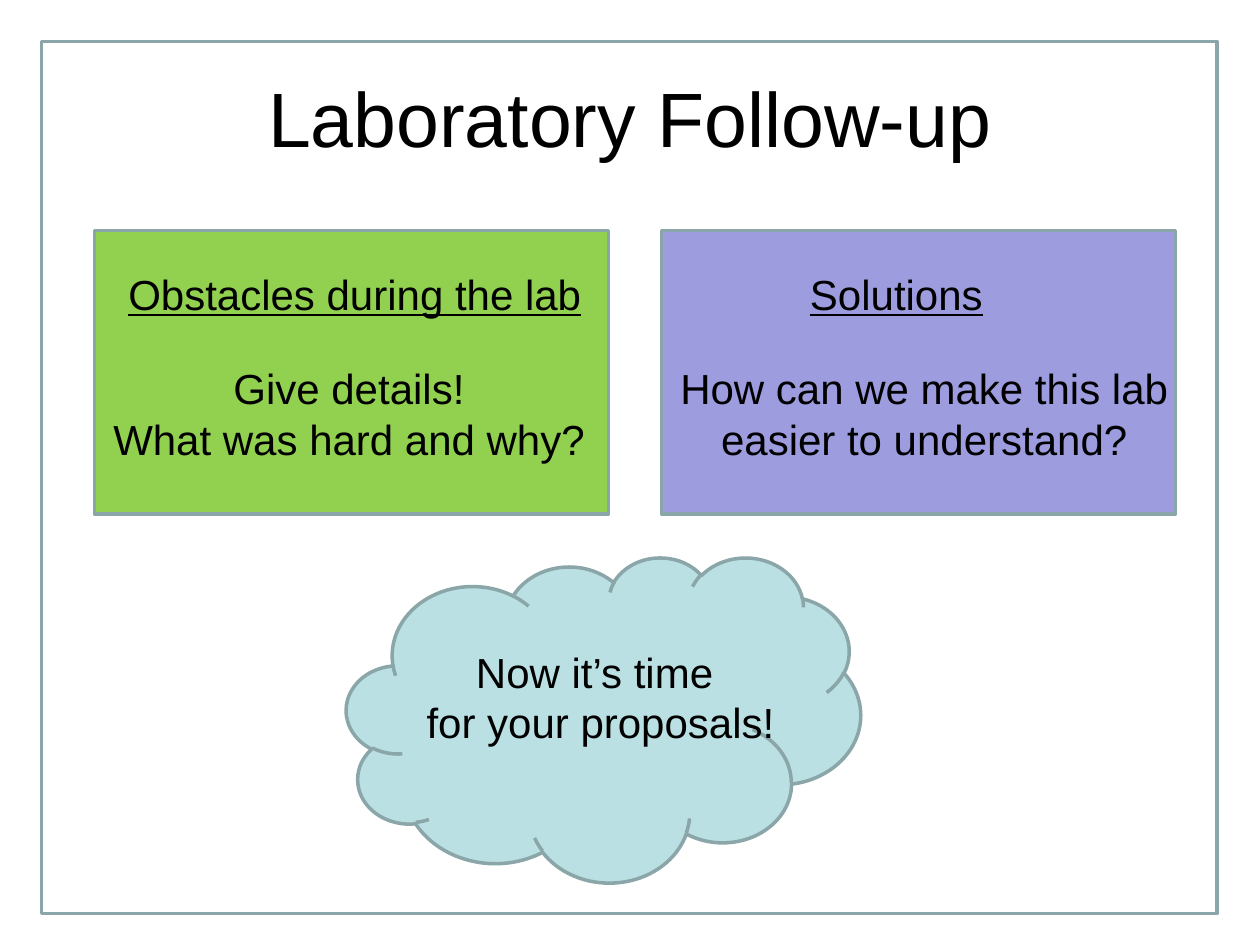
from pptx import Presentation
from pptx.dml.color import RGBColor
from pptx.enum.shapes import MSO_SHAPE
from pptx.enum.text import MSO_ANCHOR, MSO_AUTO_SIZE, PP_ALIGN
from pptx.util import Inches, Pt

COLORS = {
    "text": "000000",
    "outline": "8AA6A8",
    "obstacles": "92D050",
    "solutions": "9C9CDF",
    "proposals": "BBE0E3",
}


class SlideBuilder:
    font_name = "Arial"
    title_size = 44
    text_size = 24
    line_width = 2

    def __init__(self, slide):
        self.slide = slide

    def color(self, name):
        return RGBColor.from_string(COLORS[name])

    def format(self, paragraph, size, align, underline=None):
        paragraph.alignment = align
        font = paragraph.font
        font.name = self.font_name
        font.size = Pt(size)
        font.color.rgb = self.color("text")
        font.underline = underline

    def title(self, text, left, top, width, height):
        title = self.slide.shapes.title
        title.left, title.top = Inches(left), Inches(top)
        title.width, title.height = Inches(width), Inches(height)
        title.text_frame.text = text
        title.text_frame.vertical_anchor = MSO_ANCHOR.MIDDLE
        self.format(title.text_frame.paragraphs[0], self.title_size, PP_ALIGN.CENTER)

    def shape(self, preset, left, top, width, height, fill=None, group=None):
        shape = (group or self.slide).shapes.add_shape(
            preset, Inches(left), Inches(top), Inches(width), Inches(height)
        )
        shape.shadow.inherit = False
        if fill:
            shape.fill.solid()
            shape.fill.fore_color.rgb = self.color(fill)
        else:
            shape.fill.background()
        shape.line.color.rgb = self.color("outline")
        shape.line.width = Pt(self.line_width)

    def text(self, text, left, top, width, height,
             align=PP_ALIGN.CENTER, underline=None, group=None):
        box = (group or self.slide).shapes.add_textbox(
            Inches(left), Inches(top), Inches(width), Inches(height)
        )
        frame = box.text_frame
        frame.word_wrap = False
        frame.auto_size = MSO_AUTO_SIZE.SHAPE_TO_FIT_TEXT
        paragraph = frame.paragraphs[0]
        paragraph.text = text
        self.format(paragraph, self.text_size, align, underline)

    def heading(self, text, left, top, width, height):
        self.text(text, left, top, width, height, PP_ALIGN.LEFT, True)

    def group(self):
        return self.slide.shapes.add_group_shape()


def main():
    presentation = Presentation()
    presentation.slide_width = Inches(10)
    presentation.slide_height = Inches(7.5)
    builder = SlideBuilder(presentation.slides.add_slide(presentation.slide_layouts[5]))

    builder.title("Laboratory Follow-up", 0.5, 0.3, 9, 1.25)
    for left, fill in ((5.25, "solutions"), (0.75, "obstacles")):
        builder.shape(MSO_SHAPE.RECTANGLE, left, 1.83, 4.08, 2.25, fill)

    builder.heading("Obstacles during the lab", 0.92, 2.08, 3.84, 0.51)
    builder.heading("Solutions", 6.33, 2.08, 1.59, 0.51)
    builder.text("Give details!\nWhat was hard and why?", 0.78, 2.83, 3.98, 0.91)
    builder.text("How can we make this lab\neasier to understand?", 5.28, 2.83, 4.11, 0.91)

    proposals = builder.group()
    builder.shape(MSO_SHAPE.CLOUD, 2.75, 4.42, 4.08, 2.58, "proposals", proposals)
    builder.text("Now it’s time \nfor your proposals!", 3.27, 5.08, 2.99, 0.91, group=proposals)

    builder.shape(MSO_SHAPE.RECTANGLE, 0.33, 0.33, 9.33, 6.92)
    presentation.save("out.pptx")


if __name__ == "__main__":
    main()
